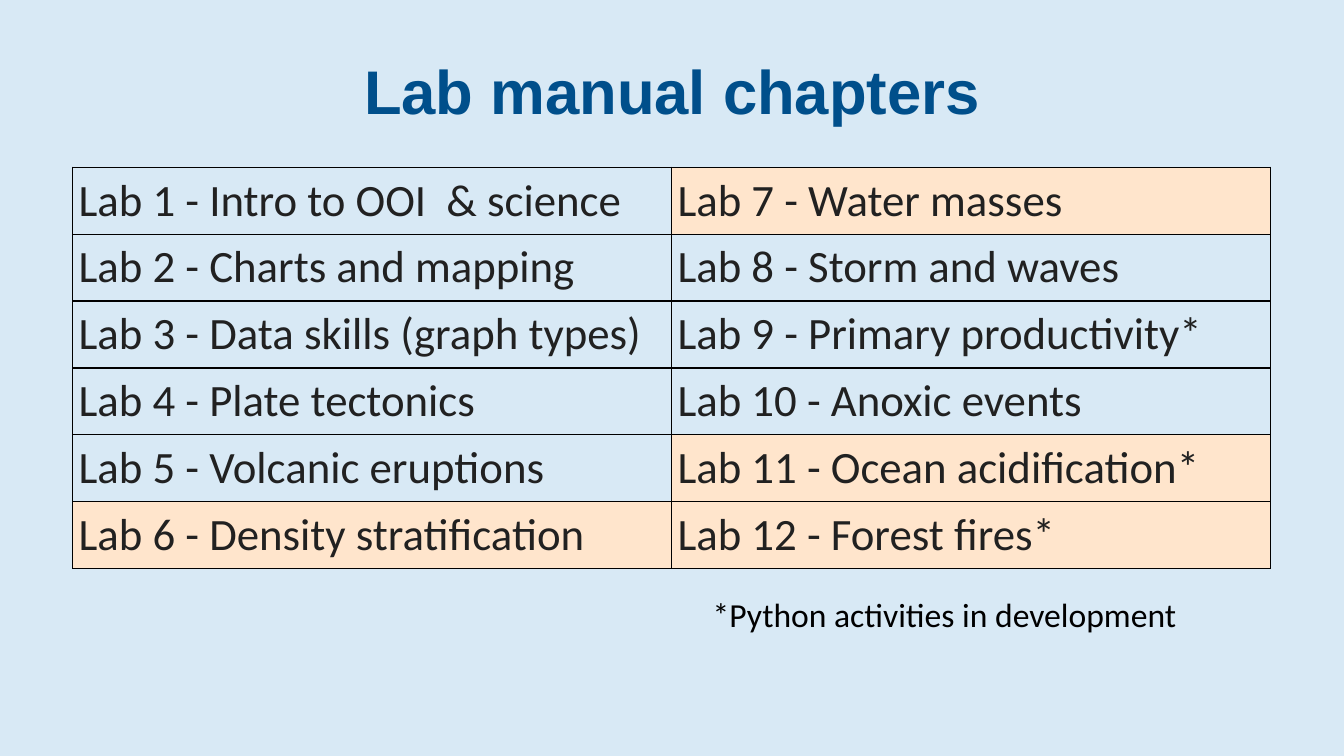
from lxml.etree import SubElement
from pptx import Presentation
from pptx.dml.color import RGBColor
from pptx.enum.text import MSO_ANCHOR, MSO_AUTO_SIZE, PP_ALIGN
from pptx.oxml.ns import qn
from pptx.util import Inches, Pt

SKY = RGBColor(0xD8, 0xE9, 0xF5)
NAVY = RGBColor(0x00, 0x4F, 0x8B)
INK = RGBColor(0x21, 0x21, 0x21)
BLACK = RGBColor(0x00, 0x00, 0x00)
PEACH = RGBColor(0xFF, 0xE5, 0xCC)

CHAPTERS = [
    "Intro to OOI  & science", "Charts and mapping",
    "Data skills (graph types)", "Plate tectonics",
    "Volcanic eruptions", "Density stratification",
    "Water masses", "Storm and waves", "Primary productivity*",
    "Anoxic events", "Ocean acidification*", "Forest fires*",
]
HIGHLIGHTED_LABS = {6, 7, 11, 12}
ROWS = 6


def write(paragraph, wording, font_name, size, color, bold=False):
    """Add one formatted run to a paragraph."""
    run = paragraph.add_run()
    run.text = wording
    run.font.name = font_name
    run.font.size = Pt(size)
    run.font.color.rgb = color
    run.font.bold = bold


def add_borders(cell):
    """Draw a thin black line on every side of a cell."""
    properties = cell._tc.get_or_add_tcPr()
    for side in ("a:lnL", "a:lnR", "a:lnT", "a:lnB"):
        border = SubElement(properties, qn(side), w=str(Pt(1)))
        fill = SubElement(border, qn("a:solidFill"))
        SubElement(fill, qn("a:srgbClr"), val=str(BLACK))


def place_heading(slide, left, top, width, height):
    """Format the slide title inside its box."""
    heading = slide.shapes.title
    heading.left, heading.top = Inches(left), Inches(top)
    heading.width, heading.height = Inches(width), Inches(height)
    heading.text_frame.vertical_anchor = MSO_ANCHOR.MIDDLE
    paragraph = heading.text_frame.paragraphs[0]
    paragraph.alignment = PP_ALIGN.CENTER
    paragraph.line_spacing = 0.9
    write(paragraph, "Lab manual chapters", "Arial", 44, NAVY, True)


def place_chapters(slide, left, top, width, height):
    """List the labs down two columns of a bordered table."""
    columns = len(CHAPTERS) // ROWS
    table = slide.shapes.add_table(
        ROWS, columns, Inches(left), Inches(top), Inches(width), Inches(height)
    ).table
    table.first_row = table.horz_banding = False
    for index, chapter in enumerate(CHAPTERS):
        lab = index + 1
        column, row = divmod(index, ROWS)
        cell = table.cell(row, column)
        cell.margin_left = cell.margin_right = Inches(0.06)
        cell.margin_top = cell.margin_bottom = Inches(0.06)
        add_borders(cell)
        if lab in HIGHLIGHTED_LABS:
            cell.fill.solid()
            cell.fill.fore_color.rgb = PEACH
        else:
            cell.fill.background()
        write(cell.text_frame.paragraphs[0], f"Lab {lab} - {chapter}",
              "Calibri", 32, INK)


def place_footnote(slide, left, top, width, height):
    """Explain the asterisk below the table."""
    frame = slide.shapes.add_textbox(
        Inches(left), Inches(top), Inches(width), Inches(height)
    ).text_frame
    frame.word_wrap = False
    frame.auto_size = MSO_AUTO_SIZE.SHAPE_TO_FIT_TEXT
    write(frame.paragraphs[0], "*Python activities in development",
          "Calibri", 24, BLACK)


def main():
    """Build and save the slide."""
    deck = Presentation()
    deck.slide_width, deck.slide_height = Inches(13.33), Inches(7.5)
    slide = deck.slides.add_slide(deck.slide_layouts[5])
    slide.background.fill.solid()
    slide.background.fill.fore_color.rgb = SKY
    place_chapters(slide, 0.72, 1.66, 11.88, 3.9)
    place_footnote(slide, 6.97, 5.84, 4.85, 0.5)
    place_heading(slide, 0.92, 0.21, 11.5, 1.45)
    deck.save("out.pptx")


if __name__ == "__main__":
    main()
